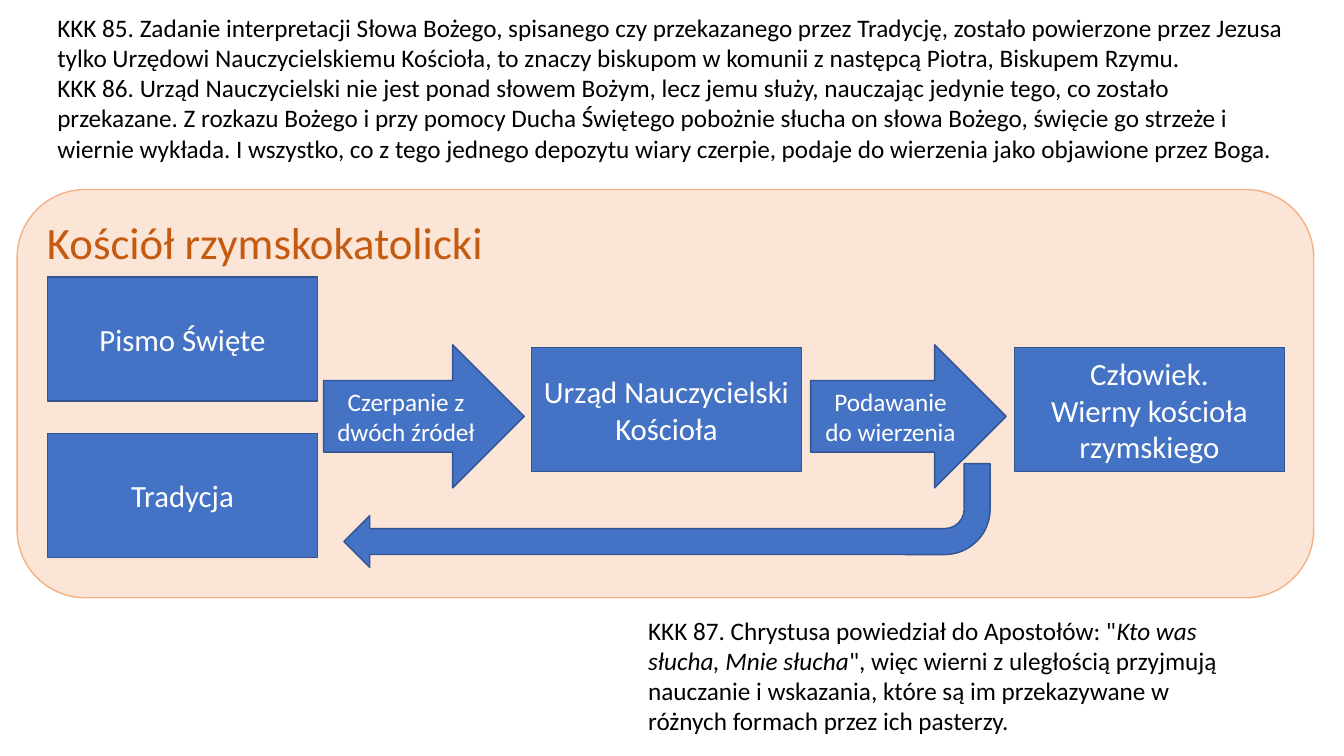
from pptx import Presentation
from pptx.dml.color import RGBColor
from pptx.enum.shapes import MSO_SHAPE as Shape
from pptx.enum.text import MSO_ANCHOR as Anchor, MSO_AUTO_SIZE as AutoSize, PP_ALIGN as Align
from pptx.util import Inches, Pt

BLUE = RGBColor(0x44, 0x72, 0xC4)
NAVY = RGBColor(0x32, 0x54, 0x91)
PEACH = RGBColor(0xFB, 0xE5, 0xD6)
ORANGE = RGBColor(0xF4, 0xB1, 0x83)
RUST = RGBColor(0xC5, 0x5A, 0x11)
WHITE = RGBColor(0xFF, 0xFF, 0xFF)
BLACK = RGBColor(0, 0, 0)


def add_text(para, text, font="Calibri", size=18, color=BLACK, italic=False):
    for index, line in enumerate(text.split("\n")):
        if index:
            para.add_line_break()
        span = para.add_run()
        span.text = line
        span.font.name = font
        span.font.size = Pt(size)
        span.font.color.rgb = color
        span.font.italic = italic


class Page:
    box_width, box_height = 2.68, 1.23
    arrow_top, arrow_height = 3.42, 1.42

    def __init__(self, deck):
        self.shapes = deck.slides.add_slide(deck.slide_layouts[6]).shapes

    def shape(self, kind, left, top, width, height, fill=BLUE, line=NAVY):
        shape = self.shapes.add_shape(
            kind, Inches(left), Inches(top), Inches(width), Inches(height))
        shape.shadow.inherit = False
        shape.fill.solid()
        shape.fill.fore_color.rgb = fill
        shape.line.color.rgb = line
        shape.line.width = Pt(1)
        return shape

    def label(self, shape, text, align=Align.CENTER, anchor=Anchor.MIDDLE, **style):
        frame = shape.text_frame
        frame.word_wrap = True
        frame.vertical_anchor = anchor
        para = frame.paragraphs[0]
        para.alignment = align
        add_text(para, text, **style)

    def panel(self, text, left, top, width, height):
        panel = self.shape(Shape.ROUNDED_RECTANGLE, left, top, width, height, PEACH, ORANGE)
        self.label(panel, text, Align.LEFT, Anchor.TOP, size=32, color=RUST)

    def box(self, text, left, top):
        box = self.shape(Shape.RECTANGLE, left, top, self.box_width, self.box_height)
        self.label(box, text, size=22, color=WHITE)

    def arrow(self, text, left, width):
        arrow = self.shape(Shape.RIGHT_ARROW, left, self.arrow_top, width, self.arrow_height)
        self.label(arrow, text, color=WHITE)

    def return_arrow(self, left, top, width, height):
        self.shape(Shape.BENT_ARROW, left, top, width, height).rotation = 180

    def note(self, paragraphs, left, top, width, height):
        note = self.shapes.add_textbox(
            Inches(left), Inches(top), Inches(width), Inches(height))
        frame = note.text_frame
        frame.word_wrap = True
        frame.auto_size = AutoSize.SHAPE_TO_FIT_TEXT
        for index, spans in enumerate(paragraphs):
            para = frame.add_paragraph() if index else frame.paragraphs[0]
            for text, italic in spans:
                add_text(para, text, italic=italic)


def main():
    deck = Presentation()
    deck.slide_width, deck.slide_height = Inches(13.33), Inches(7.5)
    page = Page(deck)

    page.panel("Kościół rzymskokatolicki", 0.17, 1.88, 12.86, 4.05)
    for text, left, top in [
        ("Pismo Święte", 0.47, 2.75),
        ("Tradycja", 0.47, 4.3),
        ("Urząd Nauczycielski Kościoła", 5.27, 3.45),
        ("Człowiek.\nWierny kościoła rzymskiego", 10.06, 3.45),
    ]:
        page.box(text, left, top)
    page.arrow("Czerpanie z dwóch źródeł", 3.21, 1.99)
    page.arrow("Podawanie do wierzenia", 8.04, 1.94)
    page.return_arrow(3.41, 4.6, 6.41, 1.03)

    page.note([
        [("KKK 85. Zadanie interpretacji Słowa Bożego, spisanego czy przekazanego przez "
          "Tradycję, zostało powierzone przez Jezusa tylko Urzędowi Nauczycielskiemu "
          "Kościoła, to znaczy biskupom w komunii z następcą Piotra, Biskupem Rzymu.", False)],
        [("KKK 86. Urząd Nauczycielski nie jest ponad słowem Bożym, lecz jemu służy, "
          "nauczając jedynie tego, co zostało przekazane. Z rozkazu Bożego i przy pomocy "
          "Ducha Świętego pobożnie słucha on słowa Bożego, święcie go strzeże i wiernie "
          "wykłada. I wszystko, co z tego jednego depozytu wiary czerpie, podaje do "
          "wierzenia jako objawione przez Boga.", False)],
    ], 0.47, 0.07, 12.43, 1.62)
    page.note([
        [("KKK 87. Chrystusa powiedział do Apostołów: \"", False),
         ("Kto was słucha, Mnie słucha", True),
         ("\", więc wierni z uległością przyjmują nauczanie i wskazania, które są im "
          "przekazywane w różnych formach przez ich pasterzy.", False)],
    ], 6.33, 6.05, 6.18, 1.31)

    deck.save("out.pptx")


if __name__ == "__main__":
    main()
